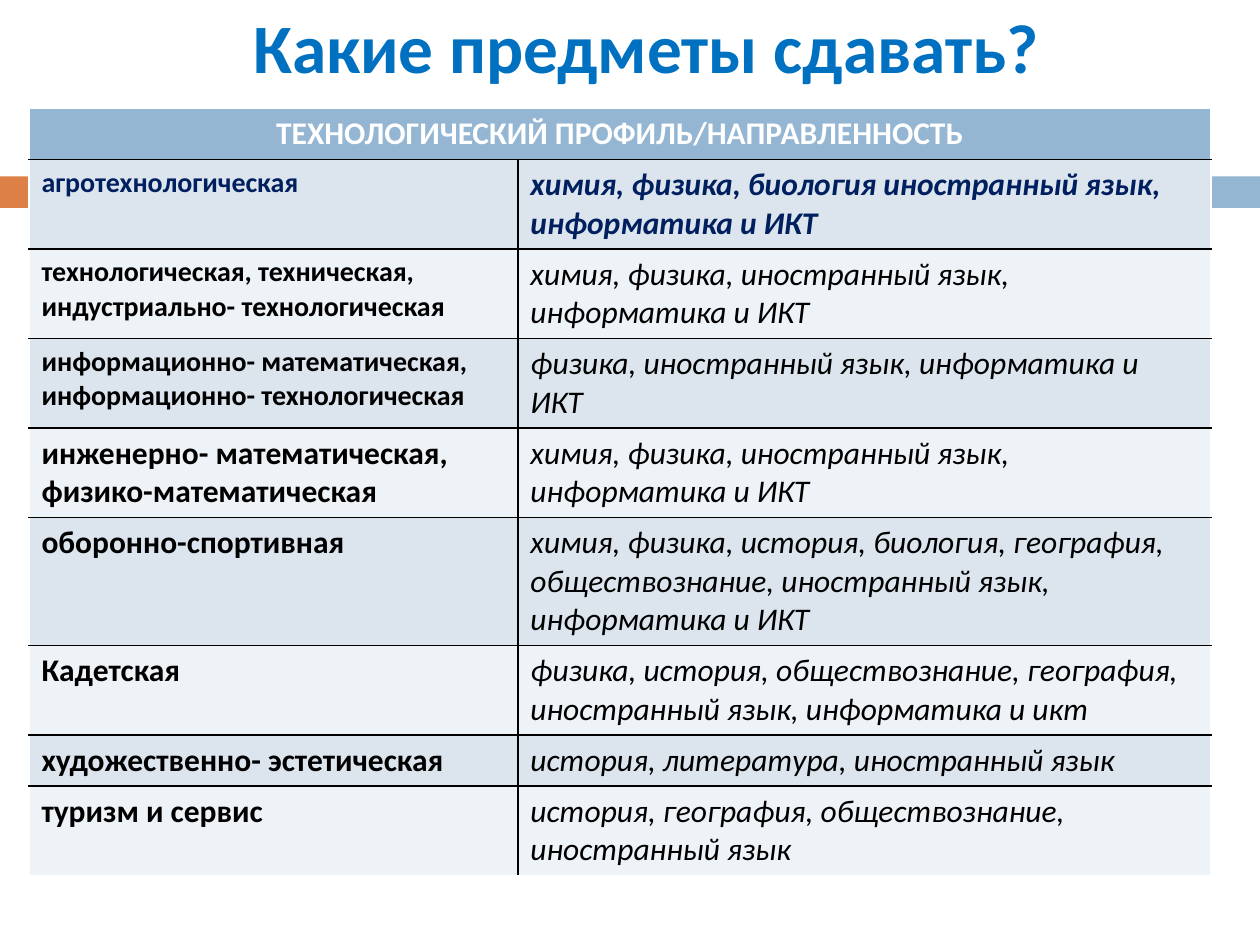
from lxml.etree import SubElement
from pptx import Presentation
from pptx.dml.color import RGBColor as Rgb
from pptx.enum.shapes import MSO_SHAPE as Shape
from pptx.enum.text import MSO_ANCHOR as Anchor, PP_ALIGN as Align
from pptx.oxml.ns import qn
from pptx.util import Inches, Pt

COLORS = {
    "orange": "DD8047", "blue": "94B6D2", "title": "0070C0", "navy": "001F5F",
    "black": "000000", "white": "FFFFFF", "odd": "DCE5EE", "even": "EEF3F7",
}
FONT = "Calibri"

# Profile, its type size, exam subjects, lines of text in the row
PROFILES = [
    ("агротехнологическая", 16,
     "химия, физика, биология иностранный язык, информатика и ИКТ", 2),
    ("технологическая, техническая, индустриально- технологическая", 16,
     "химия, физика, иностранный язык, информатика и ИКТ", 2),
    ("информационно- математическая, информационно- технологическая", 16,
     "физика, иностранный язык, информатика и ИКТ", 2),
    ("инженерно- математическая, физико-математическая", 18,
     "химия, физика, иностранный язык, информатика и ИКТ", 2),
    ("оборонно-спортивная", 18,
     "химия, физика, история, биология, география, обществознание, "
     "иностранный язык, информатика и ИКТ", 3),
    ("Кадетская", 18,
     "физика, история, обществознание, география, иностранный язык, "
     "информатика и икт", 2),
    ("художественно- эстетическая", 18, "история, литература, иностранный язык", 1),
    ("туризм и сервис", 18, "история, география, обществознание, иностранный язык", 2),
]


def write(paragraph, text, size, color, bold=True, italic=False):
    run = paragraph.add_run()
    run.text = text
    run.font.name = FONT
    run.font.size = Pt(size)
    run.font.bold = bold
    run.font.italic = italic
    run.font.color.rgb = Rgb.from_string(COLORS[color])


def style_cell(cell, fill, left, right, top, bottom):
    props = cell._tc.get_or_add_tcPr()
    for side, color in (("L", left), ("R", right), ("T", top), ("B", bottom)):
        border = SubElement(props, qn(f"a:ln{side}"), w=str(Pt(1)))
        paint = SubElement(border, qn("a:solidFill"))
        SubElement(paint, qn("a:srgbClr"), val=COLORS[color])
    cell.fill.solid()
    cell.fill.fore_color.rgb = Rgb.from_string(COLORS[fill])


deck = Presentation()
deck.slide_width, deck.slide_height = Inches(10), Inches(7.5)
slide = deck.slides.add_slide(deck.slide_layouts[5])

# Side bars behind the table
for left, width, color in ((0, 0.58, "orange"), (0.65, 9.35, "blue")):
    bar = slide.shapes.add_shape(
        Shape.RECTANGLE, Inches(left), Inches(1.4), Inches(width), Inches(0.25))
    bar.shadow.inherit = False
    bar.fill.solid()
    bar.fill.fore_color.rgb = Rgb.from_string(COLORS[color])
    bar.line.fill.background()

# Title
title = slide.shapes.title
title.left, title.top = Inches(0.67), Inches(0.17)
title.width, title.height = Inches(8.92), Inches(0.39)
title.text_frame.vertical_anchor = Anchor.MIDDLE
heading = title.text_frame.paragraphs[0]
heading.alignment = Align.CENTER
write(heading, "Какие предметы сдавать?", 39.6, "title")

# Table: each row is as tall as its lines of text plus the cell margins
row_heights = [0.1 + 0.305 * lines for lines in [1] + [row[3] for row in PROFILES]]
columns = (3.88, 5.5)
table = slide.shapes.add_table(
    len(row_heights), len(columns), Inches(0.23), Inches(0.86),
    Inches(sum(columns)), Inches(sum(row_heights))).table
for column, width in zip(table.columns, columns):
    column.width = Inches(width)
for row, height in zip(table.rows, row_heights):
    row.height = Inches(height)

# Header across both columns
header = table.cell(0, 0)
header.merge(table.cell(0, 1))
for cell in table.rows[0].cells:
    style_cell(cell, "blue", "white", "white", "white", "black")
header_line = header.text_frame.paragraphs[0]
header_line.alignment = Align.CENTER
write(header_line, "ТЕХНОЛОГИЧЕСКИЙ ПРОФИЛЬ/НАПРАВЛЕННОСТЬ", 18, "white")

# Profiles and their subjects; the first row is highlighted
for number, (profile, size, subjects, _) in enumerate(PROFILES, start=1):
    first, last = number == 1, number == len(PROFILES)
    fill = "odd" if number % 2 else "even"
    ink = "navy" if first else "black"
    bottom = "white" if last else "black"
    profile_cell, subjects_cell = table.rows[number].cells
    style_cell(profile_cell, fill, "white", "black", "black", bottom)
    style_cell(subjects_cell, fill, "black", "white", "black", bottom)
    write(profile_cell.text_frame.paragraphs[0], profile, size, ink)
    write(subjects_cell.text_frame.paragraphs[0], subjects, 18, ink, bold=first, italic=True)

deck.save("out.pptx")
